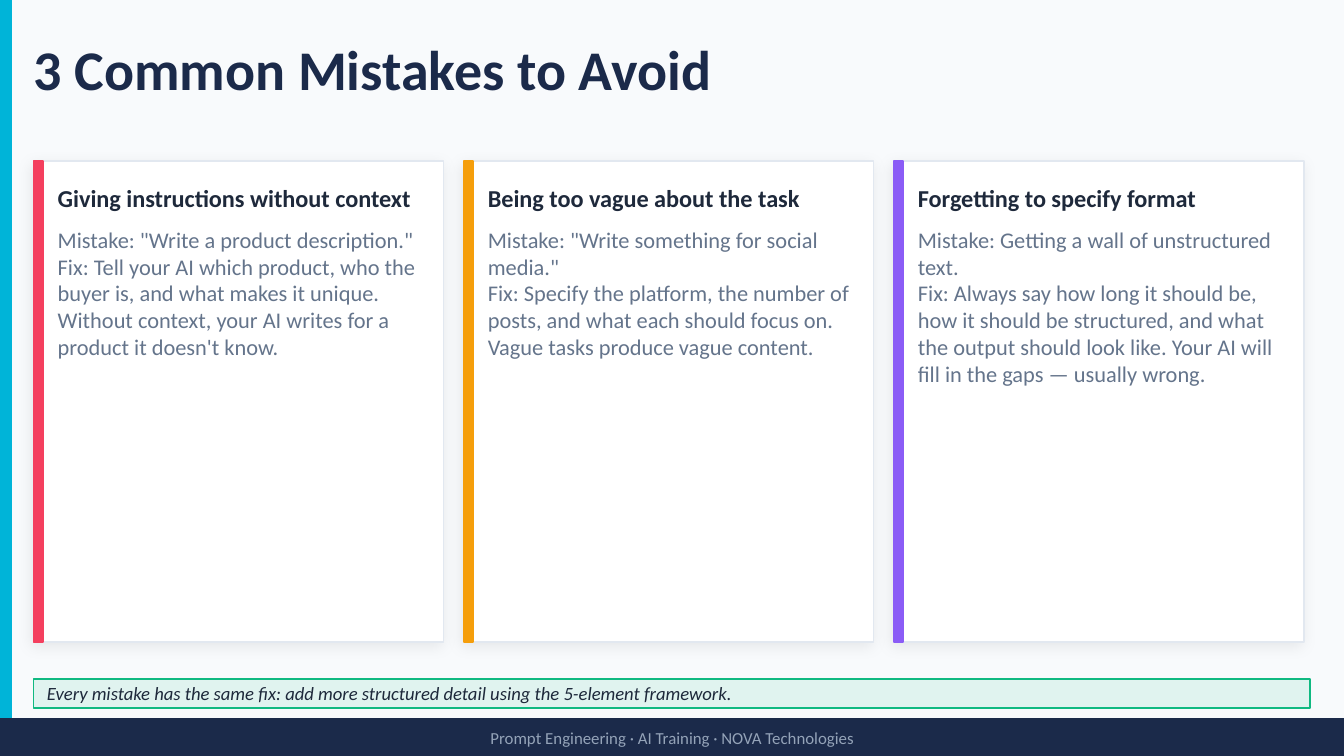
from dataclasses import dataclass

from lxml import etree
from pptx import Presentation
from pptx.dml.color import RGBColor
from pptx.enum.shapes import MSO_SHAPE
from pptx.enum.text import MSO_ANCHOR, MSO_AUTO_SIZE, PP_ALIGN
from pptx.oxml.ns import qn
from pptx.shapes.autoshape import Shape
from pptx.slide import Slide
from pptx.util import Inches, Pt

RECTANGLE = MSO_SHAPE.RECTANGLE
TOP, MIDDLE = MSO_ANCHOR.TOP, MSO_ANCHOR.MIDDLE
LEFT, CENTER = PP_ALIGN.LEFT, PP_ALIGN.CENTER
NO_AUTOFIT = MSO_AUTO_SIZE.NONE
TITLE_ONLY = 5


@dataclass(frozen=True)
class TextStyle:
    size: int
    color: str
    bold: bool = False
    italic: bool = False


@dataclass(frozen=True)
class Theme:
    font: str = "Calibri"
    background: str = "F8FAFC"
    stripe: str = "00B4D8"
    card: str = "FFFFFF"
    card_border: str = "E2E8F0"
    takeaway: str = "10B981"
    footer_bar: str = "1B2A4A"
    title: TextStyle = TextStyle(30, "1B2A4A", bold=True)
    heading: TextStyle = TextStyle(13, "1E293B", bold=True)
    body: TextStyle = TextStyle(12, "64748B")
    note: TextStyle = TextStyle(10, "1E293B", italic=True)
    footer: TextStyle = TextStyle(9, "94A3B8")


@dataclass(frozen=True)
class Box:
    left: float
    top: float
    width: float
    height: float

    def lengths(self) -> list[int]:
        return [Inches(v) for v in (self.left, self.top, self.width, self.height)]


@dataclass(frozen=True)
class Mistake:
    heading: str
    example: str
    fix: str
    accent: str


THEME = Theme()
SLIDE_WIDTH = 10
SLIDE_HEIGHT = SLIDE_WIDTH * 9 / 16
MARGIN = 0.25
CARD_TOP, CARD_WIDTH, CARD_HEIGHT, CARD_GAP = 1.2, 3.05, 3.58, 0.15
TEXT_INDENT, TEXT_WIDTH = 0.18, 2.8
FOOTER_TOP = 5.35

MISTAKES = [
    Mistake(
        "Giving instructions without context",
        'Mistake: "Write a product description."',
        "Fix: Tell your AI which product, who the buyer is, and what makes it unique. "
        "Without context, your AI writes for a product it doesn't know.",
        "F43F5E",
    ),
    Mistake(
        "Being too vague about the task",
        'Mistake: "Write something for social media."',
        "Fix: Specify the platform, the number of posts, and what each should focus on. "
        "Vague tasks produce vague content.",
        "F59E0B",
    ),
    Mistake(
        "Forgetting to specify format",
        "Mistake: Getting a wall of unstructured text.",
        "Fix: Always say how long it should be, how it should be structured, and what "
        "the output should look like. Your AI will fill in the gaps — usually wrong.",
        "8B5CF6",
    ),
]


def add_rectangle(slide: Slide, box: Box, fill: str, line: str) -> Shape:
    shape = slide.shapes.add_shape(RECTANGLE, *box.lengths())
    shape.shadow.inherit = False
    shape.fill.solid()
    shape.fill.fore_color.rgb = RGBColor.from_string(fill)
    shape.line.color.rgb = RGBColor.from_string(line)
    shape.line.width = Pt(1)
    return shape


def add_alpha(color: etree._Element, percent: int) -> None:
    etree.SubElement(color, qn("a:alpha"), val=str(percent * 1000))


def add_soft_shadow(shape: Shape) -> None:
    effects = shape._element.spPr.find(qn("a:effectLst"))
    shadow = etree.SubElement(
        effects, qn("a:outerShdw"), blurRad=str(Pt(8)), dist=str(Pt(2)),
        dir=str(135 * 60000), algn="bl", rotWithShape="0",
    )
    color = etree.SubElement(shadow, qn("a:srgbClr"), val="000000")
    add_alpha(color, 8)


def write_text(shape: Shape, lines: list[str], style: TextStyle,
               anchor: MSO_ANCHOR = MIDDLE, alignment: PP_ALIGN = LEFT) -> None:
    frame = shape.text_frame
    frame.text = "\n".join(lines)
    frame_format = {
        "word_wrap": True, "auto_size": NO_AUTOFIT, "vertical_anchor": anchor,
        "margin_left": 0, "margin_top": 0, "margin_right": 0, "margin_bottom": 0,
    }
    for name, value in frame_format.items():
        setattr(frame, name, value)
    font_format = {
        "name": THEME.font, "size": Pt(style.size),
        "bold": style.bold, "italic": style.italic,
    }
    for paragraph in frame.paragraphs:
        paragraph.alignment = alignment
        for run in paragraph.runs:
            for name, value in font_format.items():
                setattr(run.font, name, value)
            run.font.color.rgb = RGBColor.from_string(style.color)


def add_text(slide: Slide, box: Box, lines: list[str], style: TextStyle,
             anchor: MSO_ANCHOR = MIDDLE, alignment: PP_ALIGN = LEFT) -> None:
    shape = slide.shapes.add_textbox(*box.lengths())
    write_text(shape, lines, style, anchor, alignment)


def add_title(slide: Slide, text: str) -> None:
    title = slide.shapes.title
    title.left, title.top, title.width, title.height = Box(MARGIN, 0.12, 9.5, 0.78).lengths()
    write_text(title, [text], THEME.title)


def add_card(slide: Slide, left: float, mistake: Mistake) -> None:
    card = add_rectangle(slide, Box(left, CARD_TOP, CARD_WIDTH, CARD_HEIGHT),
                         THEME.card, THEME.card_border)
    add_soft_shadow(card)
    add_rectangle(slide, Box(left, CARD_TOP, 0.07, CARD_HEIGHT), mistake.accent, mistake.accent)
    text_left = left + TEXT_INDENT
    add_text(slide, Box(text_left, CARD_TOP + 0.1, TEXT_WIDTH, 0.35),
             [mistake.heading], THEME.heading)
    add_text(slide, Box(text_left, CARD_TOP + 0.48, TEXT_WIDTH, 3.32),
             [mistake.example, mistake.fix], THEME.body, TOP)


def main() -> None:
    presentation = Presentation()
    presentation.slide_width = Inches(SLIDE_WIDTH)
    presentation.slide_height = Inches(SLIDE_HEIGHT)
    slide = presentation.slides.add_slide(presentation.slide_layouts[TITLE_ONLY])
    slide.background.fill.solid()
    slide.background.fill.fore_color.rgb = RGBColor.from_string(THEME.background)

    # Side stripe and title
    add_rectangle(slide, Box(0, 0, 0.08, FOOTER_TOP), THEME.stripe, THEME.stripe)
    add_title(slide, "3 Common Mistakes to Avoid")

    # Mistake cards
    for index, mistake in enumerate(MISTAKES):
        add_card(slide, MARGIN + index * (CARD_WIDTH + CARD_GAP), mistake)

    # Takeaway strip
    strip = add_rectangle(slide, Box(MARGIN, 5.05, 9.5, 0.22), THEME.takeaway, THEME.takeaway)
    add_alpha(strip._element.spPr.find(qn("a:solidFill"))[0], 10)
    add_text(slide, Box(MARGIN + 0.1, 5.05, 9.3, 0.22),
             ["Every mistake has the same fix: add more structured detail "
              "using the 5-element framework."], THEME.note)

    # Footer
    footer = Box(0, FOOTER_TOP, SLIDE_WIDTH, SLIDE_HEIGHT - FOOTER_TOP)
    add_rectangle(slide, footer, THEME.footer_bar, THEME.footer_bar)
    add_text(slide, footer, ["Prompt Engineering · AI Training · NOVA Technologies"],
             THEME.footer, alignment=CENTER)

    presentation.save("out.pptx")


if __name__ == "__main__":
    main()
